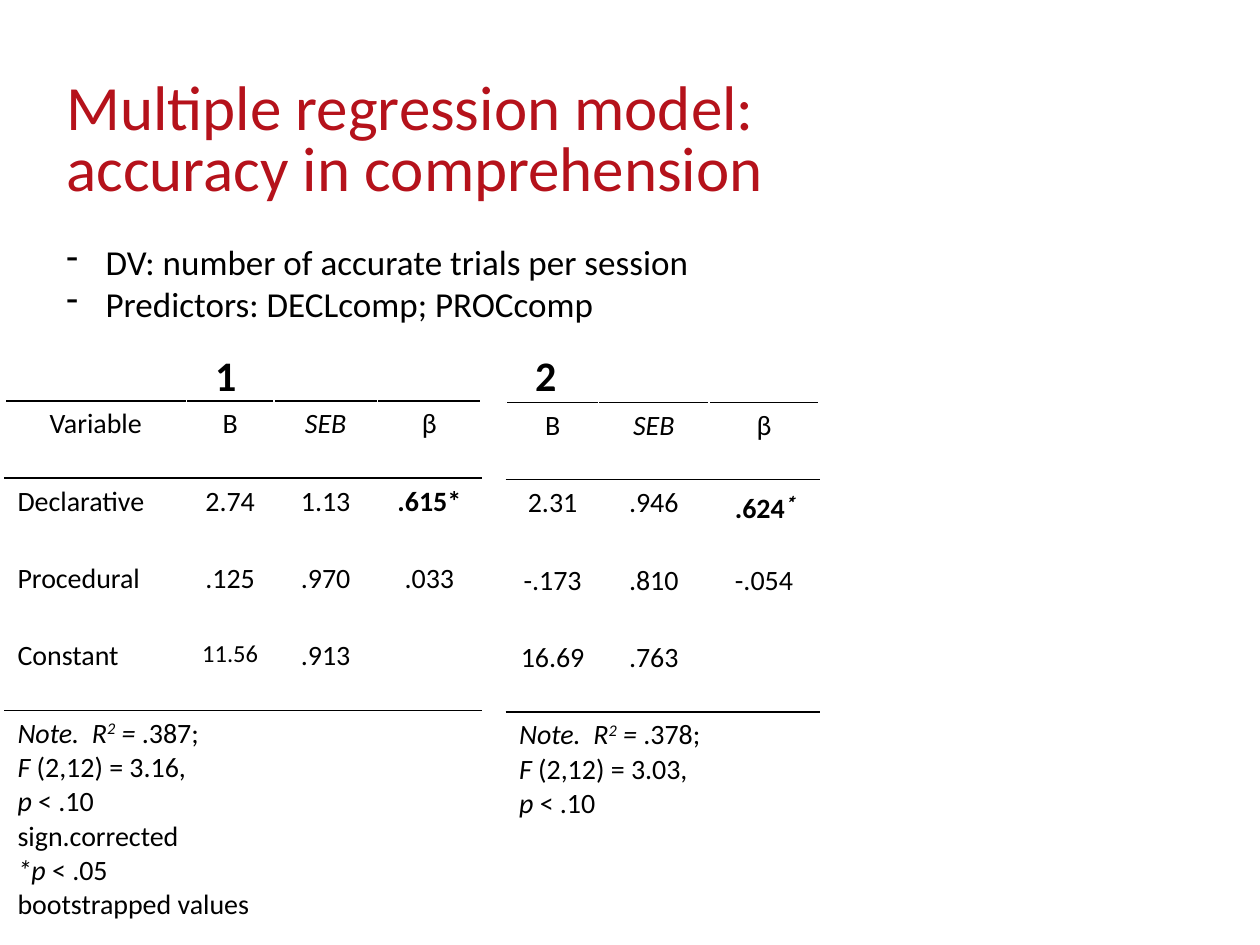
import pptx
import pptx.util
import pptx.dml.color
import pptx.enum.text
import pptx.oxml
import pptx.oxml.ns
from pptx.util import Cm

COLORS = {"title": "B5121B", "text": "000000", "rule": "000000", "clear": "FFFFFF"}
FONT = "Calibri"
STAR_FONT = "Noto Sans CJK JP"
ROW_HEIGHT = Cm(1.56)
NOTE_HEIGHT = Cm(2.34)

HEADER = ["B", [("SEB", "i")], "β"]
MODEL_1 = [
    ["Variable", *HEADER],
    ["Declarative", "2.74", "1.13", [(".615*", "b")]],
    ["Procedural", ".125", ".970", ".033"],
    ["Constant", "11.56", ".913", ""],
]
MODEL_2 = [
    HEADER,
    ["2.31", ".946", [(".624", "b"), ("*", "bis")]],
    ["-.173", ".810", "-.054"],
    ["16.69", ".763", ""],
]
CORRECTIONS = ["sign.corrected", [("*p", "i"), (" < .05", "")], "bootstrapped values"]


def fit_note(r_squared, f_value):
    return [
        [("Note.  R", "i"), ("2", "is"), (" = ", "i"), (f"{r_squared};", "")],
        [("F ", "i"), (f"(2,12) = {f_value},", "")],
        [("p ", "i"), ("< .10", "")],
    ]


def format_run(run, size, color="text", style=""):
    run.font.name = FONT
    run.font.size = pptx.util.Pt(size)
    run.font.color.rgb = pptx.dml.color.RGBColor.from_string(COLORS[color])
    run.font.bold = "b" in style
    run.font.italic = "i" in style
    if "s" in style:
        run.font._element.set("baseline", "30000")


def add_text(slide, box, text, size, color="text", style="", wrap=True, grow=True):
    shape = slide.shapes.add_textbox(*(Cm(value) for value in box))
    frame = shape.text_frame
    frame.text = text
    frame.word_wrap = wrap
    if grow:
        frame.auto_size = pptx.enum.text.MSO_AUTO_SIZE.SHAPE_TO_FIT_TEXT
    for paragraph in frame.paragraphs:
        for run in paragraph.runs:
            format_run(run, size, color, style)
    return frame


def add_dash(paragraph):
    properties = paragraph._p.get_or_add_pPr()
    properties.set("marL", str(Cm(0.79)))
    properties.set("indent", str(-Cm(0.79)))
    bullet = pptx.oxml.parse_xml(
        f'<a:buChar {pptx.oxml.ns.nsdecls("a")} char="-"/>')
    properties.append(bullet)


def set_borders(cell, top, bottom):
    properties = cell._tc.get_or_add_tcPr()
    sides = {"lnL": "clear", "lnR": "clear", "lnT": top, "lnB": bottom}
    for position, (side, color) in enumerate(sides.items()):
        line = pptx.oxml.parse_xml(
            f'<a:{side} {pptx.oxml.ns.nsdecls("a")} w="12700"><a:solidFill>'
            f'<a:srgbClr val="{COLORS[color]}"/></a:solidFill></a:{side}>')
        properties.insert(position, line)


def fill_paragraph(paragraph, content, size=16):
    pieces = [(content, "")] if isinstance(content, str) else content
    for text, style in pieces:
        if text:
            run = paragraph.add_run()
            run.text = text
            format_run(run, size, style=style)
            if style == "bis":
                run.font.name = STAR_FONT


def add_model_table(slide, left, top, height, widths, rows, note):
    last = len(rows)
    frame = slide.shapes.add_table(
        last + 1, len(widths), Cm(left), Cm(top), Cm(sum(widths)), Cm(height))
    table = frame.table
    table.first_row = False
    table.horz_banding = False
    for column, width in zip(table.columns, widths):
        column.width = Cm(width)
    for index, row in enumerate(table.rows):
        row.height = NOTE_HEIGHT if index == last else ROW_HEIGHT
        top_color = "rule" if index in (0, 1, last) else "clear"
        bottom_color = "rule" if index in (0, last - 1) else "clear"
        for cell in row.cells:
            cell.fill.background()
            set_borders(cell, top_color, bottom_color)
    for row_index, row in enumerate(rows):
        for column_index, content in enumerate(row):
            paragraph = table.cell(row_index, column_index).text_frame.paragraphs[0]
            is_label = row_index > 0 and content in ("Declarative", "Procedural", "Constant")
            if not is_label:
                paragraph.alignment = pptx.enum.text.PP_ALIGN.CENTER
            fill_paragraph(paragraph, content, 14 if content == "11.56" else 16)
    note_cell = table.cell(last, 0)
    note_cell.merge(table.cell(last, len(widths) - 1))
    for index, content in enumerate(note):
        text_frame = note_cell.text_frame
        paragraph = text_frame.add_paragraph() if index else text_frame.paragraphs[0]
        fill_paragraph(paragraph, content)
    frame.height = Cm(height)


def main():
    presentation = pptx.Presentation()
    presentation.slide_width = Cm(25.4)
    presentation.slide_height = Cm(19.05)
    slide = presentation.slides.add_slide(presentation.slide_layouts[6])

    title = add_text(slide, (1.09, 1.52, 18.8, 3.2),
                     "Multiple regression model: accuracy in comprehension",
                     36, "title", grow=False)
    title.paragraphs[0].line_spacing = pptx.util.Pt(35)

    design = add_text(slide, (1.09, 4.72, 14.4, 1.96),
                      "DV: number of accurate trials per session\n"
                      "Predictors: DECLcomp; PROCcomp", 20)
    for paragraph in design.paragraphs:
        add_dash(paragraph)

    for number, left in (("1", 4.09), ("2", 10.54)):
        add_text(slide, (left, 6.93, 0.94, 1.27), number, 24, style="b", wrap=False)

    add_model_table(slide, 0.1, 8.08, 10.57, (3.66, 1.76, 2.09, 2.09),
                    MODEL_1, fit_note(".387", "3.16") + CORRECTIONS)
    add_model_table(slide, 10.21, 8.11, 9.22, (1.86, 2.22, 2.22),
                    MODEL_2, fit_note(".378", "3.03"))

    presentation.save("out.pptx")


if __name__ == "__main__":
    main()
